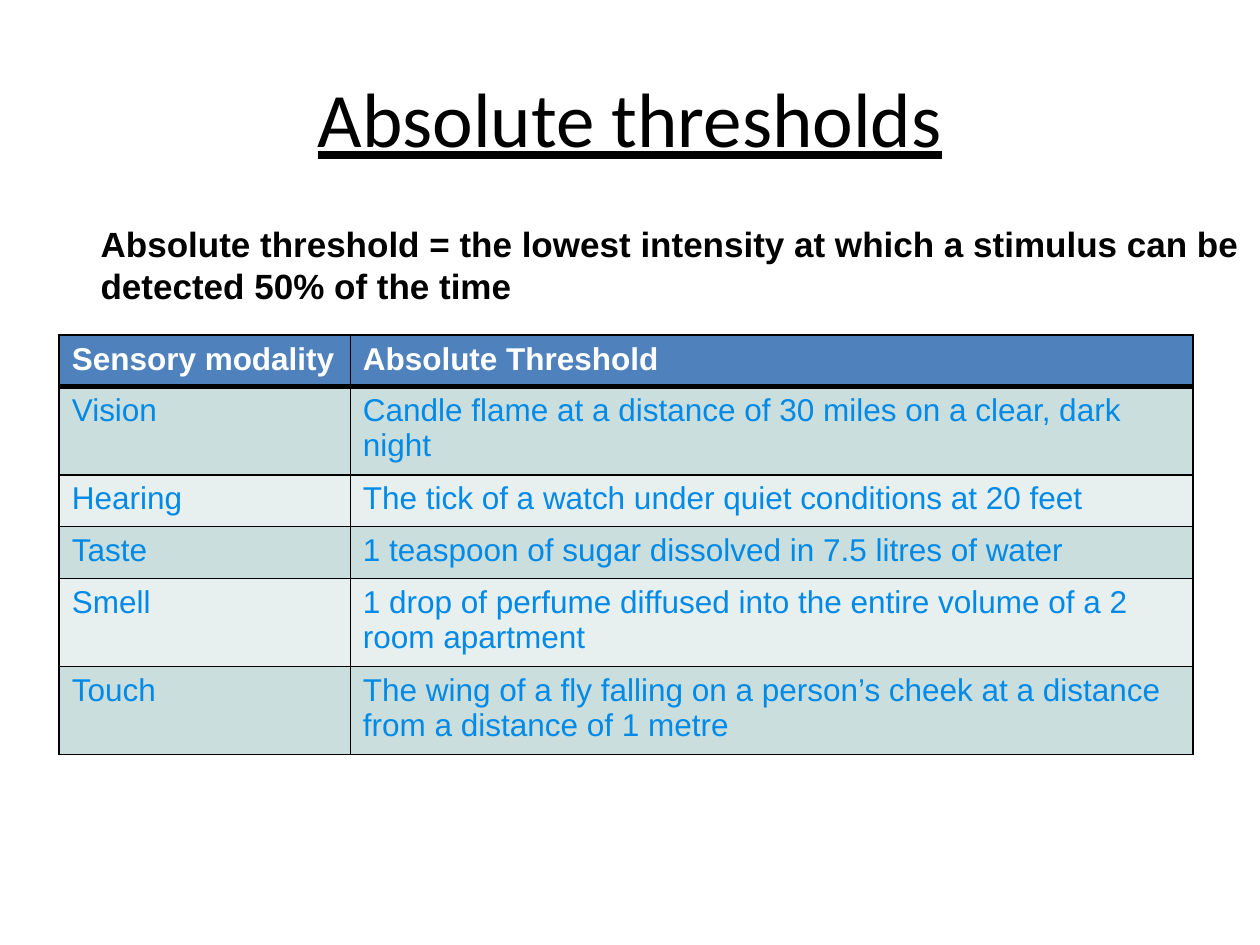
from lxml.etree import SubElement
from pptx import Presentation
from pptx.dml.color import RGBColor
from pptx.enum.text import MSO_ANCHOR, MSO_AUTO_SIZE, PP_ALIGN
from pptx.oxml.ns import qn
from pptx.util import Inches, Pt

# Content
TITLE = "Absolute thresholds"
DEFINITION = [
    "Absolute threshold = the lowest intensity at which a stimulus can be",
    "detected 50% of the time",
]
THRESHOLDS = [
    ("Sensory modality", "Absolute Threshold"),
    ("Vision", "Candle flame at a distance of 30 miles on a clear, dark night"),
    ("Hearing", "The tick of a watch under quiet conditions at 20 feet"),
    ("Taste", "1 teaspoon of sugar dissolved in 7.5 litres of water"),
    ("Smell", "1 drop of perfume diffused into the entire volume of a 2 room apartment"),
    ("Touch", "The wing of a fly falling on a person’s cheek at a distance "
              "from a distance of 1 metre"),
]
COLUMN_WIDTHS = [2.31, 6.69]
ONE_LINE, TWO_LINES = 0.41, 0.7
LINE_LIMIT = 55  # characters that fit on one line of the wide column
COLORS = {
    "black": "000000",
    "header": "4F81BD",
    "header_text": "FFFFFF",
    "body_text": "008AE8",
    "odd_row": "CBDEDE",
    "even_row": "E7EFEF",
}


def rgb(name):
    return RGBColor.from_string(COLORS[name])


def set_font(paragraph, size, color, face="Arial", bold=False):
    font = paragraph.font
    font.name, font.size, font.bold = face, Pt(size), bold
    font.color.rgb = rgb(color)


def set_borders(cell, top, bottom):
    properties = cell._tc.get_or_add_tcPr()
    for side, width in (("L", 1), ("R", 1), ("T", top), ("B", bottom)):
        line = SubElement(properties, qn(f"a:ln{side}"), w=str(Pt(width)))
        fill = SubElement(line, qn("a:solidFill"))
        SubElement(fill, qn("a:srgbClr"), val=COLORS["black"])


def add_title(slide):
    title = slide.shapes.title
    title.left, title.top = Inches(0.5), Inches(0.3)
    title.width, title.height = Inches(9), Inches(1.25)
    title.text_frame.text = TITLE
    title.text_frame.vertical_anchor = MSO_ANCHOR.MIDDLE
    heading = title.text_frame.paragraphs[0]
    heading.alignment = PP_ALIGN.CENTER
    set_font(heading, 44, "black", "Calibri")
    heading.font.underline = True


def add_table(slide):
    heights = [TWO_LINES if len(text) > LINE_LIMIT else ONE_LINE
               for _, text in THRESHOLDS]
    table = slide.shapes.add_table(
        len(THRESHOLDS), len(COLUMN_WIDTHS), Inches(0.47), Inches(2.66),
        Inches(sum(COLUMN_WIDTHS)), Inches(sum(heights))).table
    for column, width in zip(table.columns, COLUMN_WIDTHS):
        column.width = Inches(width)
    for r, (texts, height) in enumerate(zip(THRESHOLDS, heights)):
        table.rows[r].height = Inches(height)
        is_header = r == 0
        band = "header" if is_header else "odd_row" if r % 2 else "even_row"
        for c, text in enumerate(texts):
            cell = table.cell(r, c)
            cell.text = text
            set_font(cell.text_frame.paragraphs[0], 18,
                     "header_text" if is_header else "body_text", bold=is_header)
            # A thick rule separates the header from the body
            set_borders(cell, top=3 if r == 1 else 1, bottom=3 if is_header else 1)
            cell.fill.solid()
            cell.fill.fore_color.rgb = rgb(band)


def add_definition(slide):
    frame = slide.shapes.add_textbox(
        Inches(0.7), Inches(1.72), Inches(9.38), Inches(0.77)).text_frame
    frame.word_wrap = False
    frame.auto_size = MSO_AUTO_SIZE.SHAPE_TO_FIT_TEXT
    frame.text = "\n".join(DEFINITION)
    for paragraph in frame.paragraphs:
        set_font(paragraph, 20, "black", bold=True)


def main():
    deck = Presentation()
    deck.slide_width, deck.slide_height = Inches(10), Inches(7.5)
    slide = deck.slides.add_slide(deck.slide_layouts[5])
    add_title(slide)
    add_table(slide)
    add_definition(slide)
    deck.save("out.pptx")


if __name__ == "__main__":
    main()
